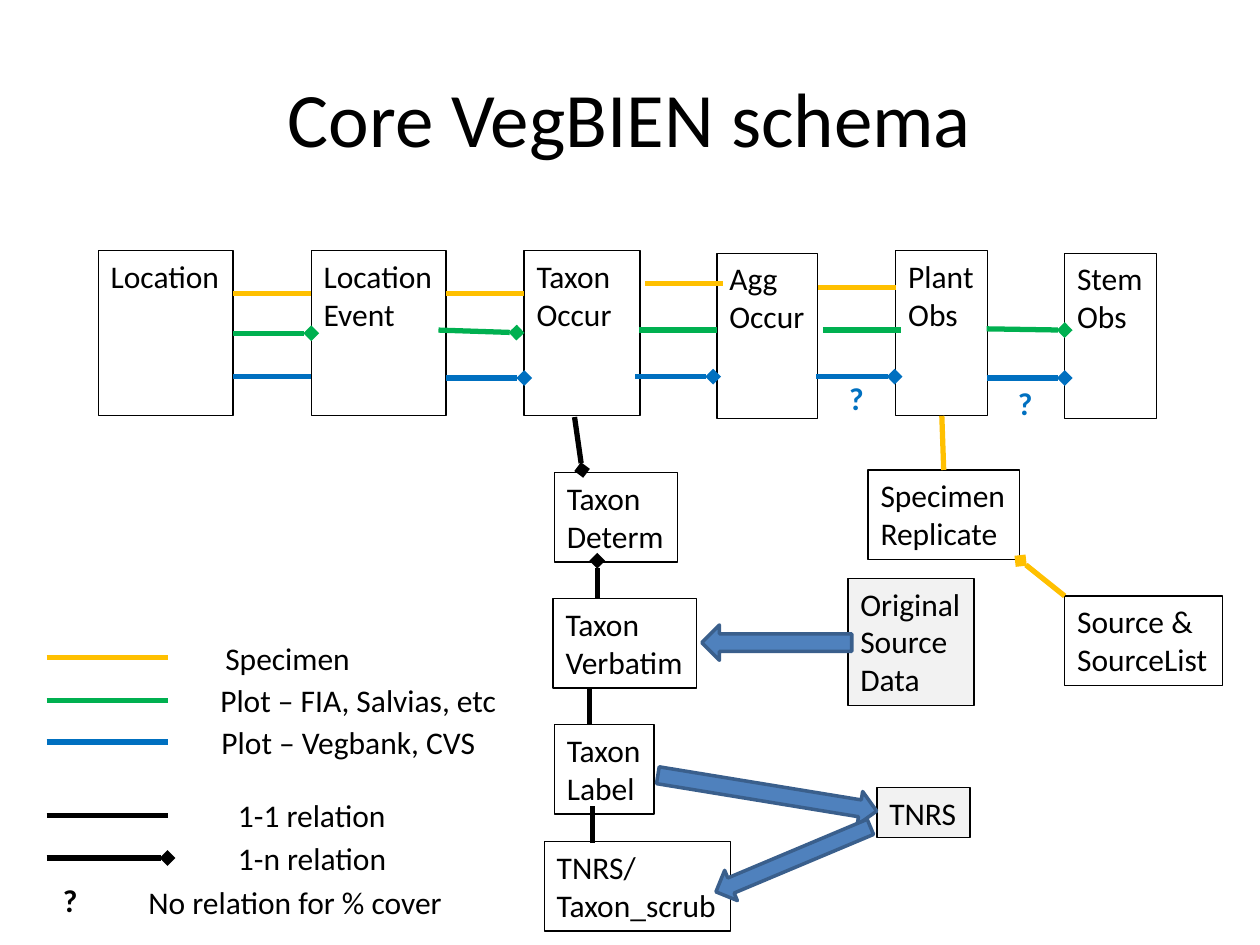
from dataclasses import dataclass

from lxml import etree
from pptx import Presentation
from pptx.dml.color import RGBColor
from pptx.enum.shapes import MSO_CONNECTOR, MSO_SHAPE
from pptx.enum.text import MSO_ANCHOR, PP_ALIGN
from pptx.oxml.ns import qn
from pptx.util import Inches, Pt

RECT = MSO_SHAPE.RECTANGLE
ARROW = MSO_SHAPE.RIGHT_ARROW
STRAIGHT = MSO_CONNECTOR.STRAIGHT
LEFT, CENTER = PP_ALIGN.LEFT, PP_ALIGN.CENTER
TOP, MIDDLE = MSO_ANCHOR.TOP, MSO_ANCHOR.MIDDLE


@dataclass(frozen=True)
class Theme:
    font: str = "Calibri"
    title: int = 44
    body: int = 18
    ink: str = "000000"
    gold: str = "FFC000"
    green: str = "00B050"
    blue: str = "0070C0"
    grey: str = "F2F2F2"
    arrow: str = "4F81BD"
    edge: str = "3A5F8C"


def rgb(code):
    return RGBColor.from_string(code)


def write(frame, text, *, font, size, color, bold=False, align=LEFT,
          anchor=TOP, wrap=False):
    """Fill a text frame, one paragraph for each line of text."""
    frame.word_wrap = wrap
    frame.vertical_anchor = anchor
    for i, row in enumerate(text.split("\n")):
        para = frame.paragraphs[0] if i == 0 else frame.add_paragraph()
        para.alignment = align
        run = para.add_run()
        run.text = row
        run.font.name = font
        run.font.size = Pt(size)
        run.font.bold = bold
        run.font.color.rgb = rgb(color)


class Sketch:
    """Holds the theme and the current slide."""

    def __init__(self, slide, theme):
        self.slide = slide
        self.shapes = slide.shapes
        self.theme = theme

    def title(self, text, x, y, w, h):
        head = self.shapes.title
        head.left, head.top = Inches(x), Inches(y)
        head.width, head.height = Inches(w), Inches(h)
        write(head.text_frame, text, font=self.theme.font, size=self.theme.title,
              color=self.theme.ink, align=CENTER, anchor=MIDDLE, wrap=True)

    def shape(self, kind, x, y, w, h, fill, edge, width):
        item = self.shapes.add_shape(kind, Inches(x), Inches(y), Inches(w), Inches(h))
        item.shadow.inherit = False
        if fill:
            item.fill.solid()
            item.fill.fore_color.rgb = rgb(fill)
        else:
            item.fill.background()
        item.line.color.rgb = rgb(edge)
        item.line.width = Pt(width)
        return item

    def box(self, text, x, y, w, h, fill=None):
        item = self.shape(RECT, x, y, w, h, fill, self.theme.ink, 0.75)
        write(item.text_frame, text, font=self.theme.font, size=self.theme.body,
              color=self.theme.ink)
        return item

    def arrow(self, x, y, w, h, turn):
        item = self.shape(ARROW, x, y, w, h, self.theme.arrow, self.theme.edge, 2)
        item.rotation = turn

    def label(self, text, x, y, w, color=None, bold=False):
        item = self.shapes.add_textbox(Inches(x), Inches(y), Inches(w), Inches(0.4))
        write(item.text_frame, text, font=self.theme.font, size=self.theme.body,
              color=color or self.theme.ink, bold=bold)

    def line(self, x1, y1, x2, y2, color, many=False):
        """Draw a relation; many puts a diamond at its end."""
        item = self.shapes.add_connector(
            STRAIGHT, Inches(x1), Inches(y1), Inches(x2), Inches(y2))
        item.line.color.rgb = rgb(color)
        item.line.width = Pt(3)
        if many:
            etree.SubElement(item.line._get_or_add_ln(), qn("a:tailEnd"), type="diamond")
        etree.SubElement(item._element.spPr, qn("a:effectLst"))
        return item


def main():
    deck = Presentation()
    deck.slide_width, deck.slide_height = Inches(10), Inches(7.5)
    theme = Theme()
    art = Sketch(deck.slides.add_slide(deck.slide_layouts[5]), theme)
    art.title("Core VegBIEN schema", 0.5, 0.3, 9, 1.25)

    # Main row of entities
    row = [art.box(text, x, y, w, 1.31) for text, x, y, w in (
        ("Location", 0.78, 1.99, 1.07),
        ("Location\nEvent", 2.47, 1.99, 1.07),
        ("Taxon\nOccur", 4.16, 1.99, 0.92),
        ("Agg\nOccur", 5.69, 2.01, 0.8),
        ("Plant\nObs", 7.11, 1.99, 0.73),
        ("Stem\nObs", 8.45, 2.01, 0.73),
    )]
    place, event, plant = row[0], row[1], row[4]

    # Taxon chain and specimen entities
    for text, x, y, w in (
        ("Taxon\nDeterm", 4.4, 3.75, 0.98),
        ("Taxon\nVerbatim", 4.39, 4.75, 1.14),
        ("Taxon\nLabel", 4.4, 5.75, 0.79),
        ("TNRS/\nTaxon_scrub", 4.32, 6.68, 1.48),
        ("Source &\nSourceList", 8.45, 4.73, 1.25),
    ):
        art.box(text, x, y, w, 0.71)
    sample = art.box("Specimen\nReplicate", 6.89, 3.73, 1.2, 0.71)

    # Outside data and services
    art.box("TNRS", 6.96, 6.25, 0.74, 0.4, theme.grey)
    art.box("Original\nSource\nData", 6.73, 4.59, 1, 1.01, theme.grey)
    art.arrow(5.21, 6.16, 1.76, 0.27, 9.3)
    art.arrow(5.63, 6.69, 1.33, 0.26, 157.2)
    art.arrow(5.57, 4.96, 1.19, 0.28, 180)

    # Relations along the main row: left, start height, end height, many
    for color, links in (
        (theme.gold, ((1.85, 2.33, 2.33, False), (3.54, 2.33, 2.33, False),
                      (5.12, 2.25, 2.25, False), (6.49, 2.28, 2.28, False))),
        (theme.green, ((3.48, 2.62, 2.64, True), (5.07, 2.62, 2.62, False),
                       (6.53, 2.62, 2.62, False), (7.83, 2.61, 2.62, True))),
        (theme.blue, ((1.85, 2.99, 2.99, False), (3.54, 3, 3, True),
                      (5.04, 2.99, 2.99, True), (6.48, 2.99, 2.99, True),
                      (7.83, 3, 3, True))),
    ):
        for x, y1, y2, many in links:
            art.line(x, y1, x + 0.62, y2, color, many)

    # Relations joined to the middle of a side
    link = art.line(1.85, 2.64, 2.47, 2.65, theme.green, True)
    link.begin_connect(place, 3)
    link.end_connect(event, 1)
    link = art.line(7.47, 3.3, 7.47, 3.73, theme.gold)
    link.begin_connect(plant, 2)
    link.end_connect(sample, 0)

    # Relations below the main row
    art.line(8.45, 4.73, 8.1, 4.45, theme.gold, True)
    art.line(4.56, 3.31, 4.62, 3.73, theme.ink, True)
    art.line(4.74, 4.75, 4.74, 4.45, theme.ink, True)
    art.line(4.68, 5.46, 4.68, 5.75, theme.ink)
    art.line(4.7, 6.4, 4.7, 6.69, theme.ink)

    # Legend
    for text, x, y, w, color, many in (
        ("Specimen", 1.69, 5.22, 1.2, theme.gold, False),
        ("Plot – FIA, Salvias, etc", 1.65, 5.56, 2.42, theme.green, False),
        ("Plot – Vegbank, CVS", 1.66, 5.89, 2.24, theme.blue, False),
        ("1-1 relation", 1.79, 6.47, 1.39, theme.ink, False),
        ("1-n relation", 1.79, 6.81, 1.39, theme.ink, True),
    ):
        art.line(0.37, y, 1.33, y, color, many)
        art.label(text, x, y - 0.2, w)
    art.label("No relation for % cover", 1.08, 6.96, 2.54)

    # Question marks
    for x, y, color in ((6.64, 2.96, theme.blue), (7.98, 3, theme.blue),
                        (0.4, 6.94, theme.ink)):
        art.label("?", x, y, 0.32, color, bold=True)

    deck.save("out.pptx")


if __name__ == "__main__":
    main()
